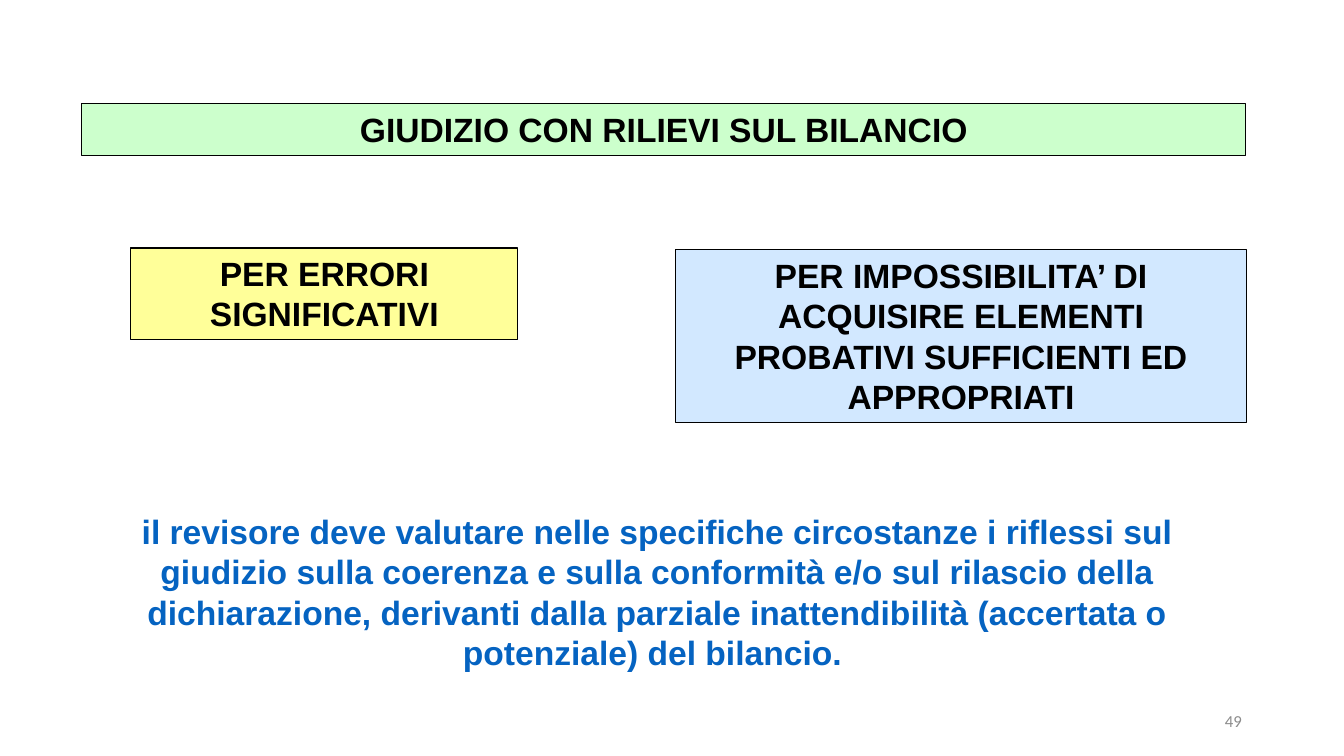
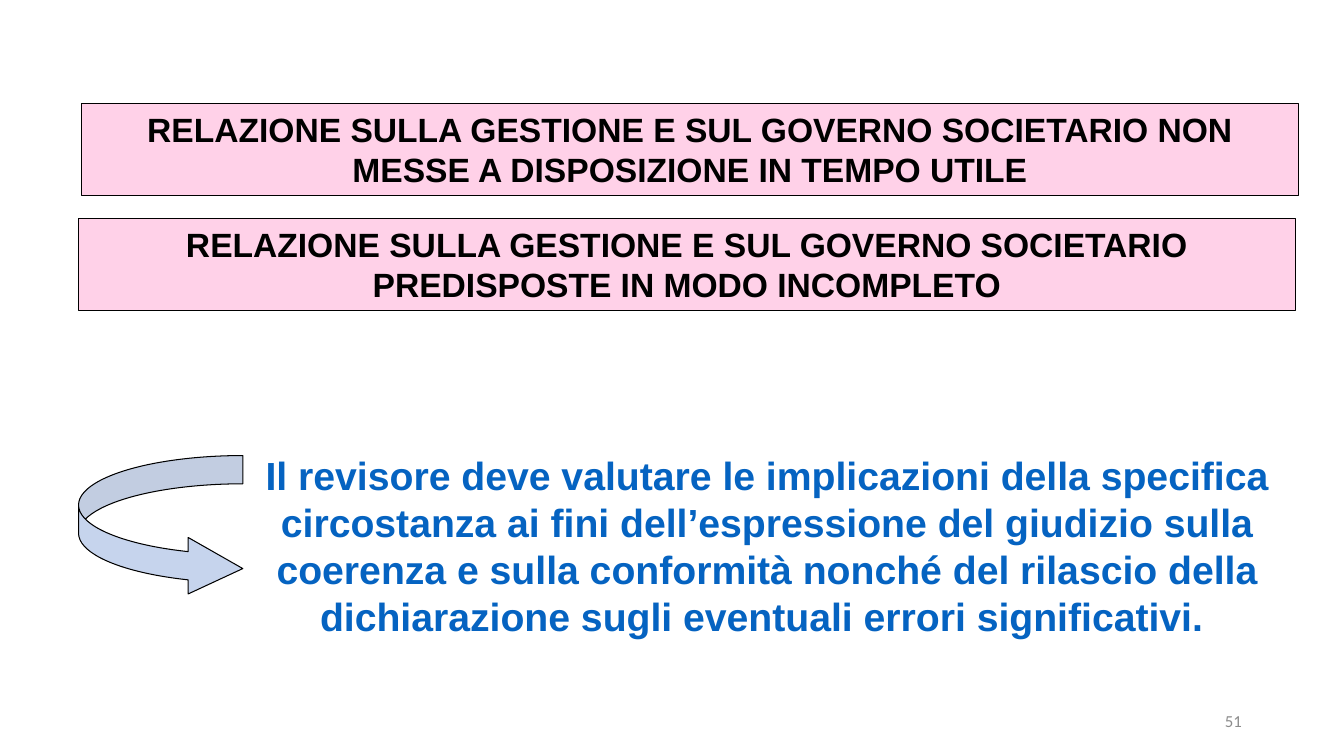
from dataclasses import dataclass

from lxml import etree
from pptx import Presentation
from pptx import util as u
from pptx.dml.color import RGBColor
from pptx.enum import shapes, text
from pptx.oxml.ns import qn


@dataclass(frozen=True)
class Theme:
    ink: str = "000000"
    message: str = "0563C1"
    number: str = "8C8C8C"
    green: tuple = ("CCFFCC", 100)
    yellow: tuple = ("FFFF99", 100)
    blue: tuple = ("99CCFF", 44)
    pink: tuple = ("FF99CC", 45)
    arrow: tuple = ("4472C4", 30)
    font: str = "Arial"
    number_font: str = "Calibri"
    body_size: int = 24
    large_size: int = 28
    number_size: int = 12
    line_width: float = 0.75


THEME = Theme()
NUMBER_AREA = (23.93, 17.65, 7.62, 1.02)

SLIDES = [
    {
        "number": "49",
        "message": (
            "il revisore deve valutare nelle specifiche circostanze i riflessi sul "
            "giudizio sulla coerenza e sulla conformità e/o sul rilascio della "
            "dichiarazione, derivanti dalla parziale inattendibilità (accertata o "
            "potenziale) del bilancio. ",
            (2.16, 12.75, 28.8, 4.32),
            THEME.body_size,
        ),
        "boxes": [
            ("GIUDIZIO CON RILIEVI SUL BILANCIO",
             (2.06, 2.62, 29.34, 1.3), THEME.green),
            ("PER ERRORI SIGNIFICATIVI",
             (3.3, 6.25, 9.75, 2.31), THEME.yellow),
            ("PER IMPOSSIBILITA’ DI ACQUISIRE ELEMENTI PROBATIVI SUFFICIENTI ED APPROPRIATI",
             (17.02, 6.3, 14.4, 4.34), THEME.blue),
        ],
    },
    {
        "number": "51",
        "message": (
            "Il revisore deve valutare le implicazioni della specifica circostanza "
            "ai fini dell’espressione del giudizio sulla coerenza e sulla conformità "
            "nonché del rilascio della dichiarazione sugli eventuali errori "
            "significativi. ",
            (5.87, 11.25, 26.92, 5),
            THEME.large_size,
        ),
        "boxes": [
            ("RELAZIONE SULLA GESTIONE E SUL GOVERNO SOCIETARIO NON MESSE A DISPOSIZIONE IN TEMPO UTILE",
             (2.06, 2.62, 30.66, 2.31), THEME.pink),
            ("RELAZIONE SULLA GESTIONE E SUL GOVERNO SOCIETARIO PREDISPOSTE IN MODO INCOMPLETO",
             (1.98, 5.51, 30.66, 2.31), THEME.pink),
        ],
        "arrow": ((1.98, 11.48, 4.14, 3.56), (0.2, 0.4, 0.387)),
    },
]


def in_cm(area):
    return [u.Cm(length) for length in area]


def write(shape, words, size, color, font=THEME.font, bold=True,
          align=text.PP_ALIGN.CENTER, anchor=text.MSO_ANCHOR.TOP):
    frame = shape.text_frame
    frame.word_wrap = True
    frame.vertical_anchor = anchor
    para = frame.paragraphs[0]
    para.text = words
    para.alignment = align
    para.font.name = font
    para.font.size = u.Pt(size)
    para.font.bold = bold
    para.font.color.rgb = RGBColor.from_string(color)


def add_figure(page, preset, area, paint):
    color, opacity = paint
    figure = page.shapes.add_shape(preset, *in_cm(area))
    figure.shadow.inherit = False
    figure.fill.solid()
    figure.fill.fore_color.rgb = RGBColor.from_string(color)
    if opacity < 100:
        tint = figure.fill._xPr.find(qn("a:solidFill"))[0]
        etree.SubElement(tint, qn("a:alpha")).set("val", str(opacity * 1000))
    figure.line.color.rgb = RGBColor.from_string(THEME.ink)
    figure.line.width = u.Pt(THEME.line_width)
    return figure


def add_page(deck, content):
    page = deck.slides.add_slide(deck.slide_layouts[6])
    number = page.shapes.add_textbox(*in_cm(NUMBER_AREA))
    write(number, content["number"], THEME.number_size, THEME.number,
          THEME.number_font, False, text.PP_ALIGN.RIGHT, text.MSO_ANCHOR.MIDDLE)

    words, area, size = content["message"]
    message = page.shapes.add_textbox(*in_cm(area))
    write(message, words, size, THEME.message)

    for words, area, paint in content["boxes"]:
        box = add_figure(page, shapes.MSO_SHAPE.RECTANGLE, area, paint)
        write(box, words, THEME.body_size, THEME.ink)

    if "arrow" in content:
        area, adjustments = content["arrow"]
        arrow = add_figure(page, shapes.MSO_SHAPE.CURVED_RIGHT_ARROW, area, THEME.arrow)
        for index, value in enumerate(adjustments):
            arrow.adjustments[index] = value


def main():
    deck = Presentation()
    deck.slide_width, deck.slide_height = u.Cm(33.87), u.Cm(19.05)
    for content in SLIDES:
        add_page(deck, content)
    deck.save("out.pptx")


if __name__ == "__main__":
    main()
